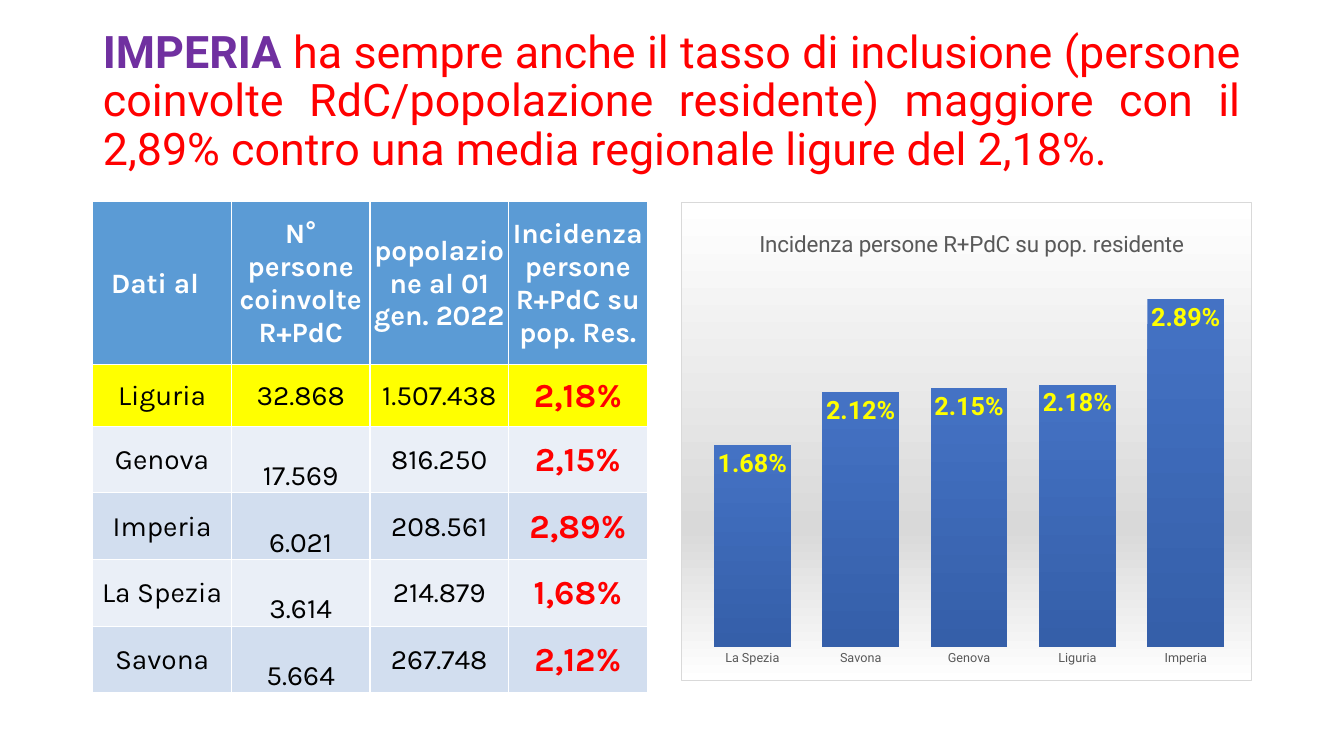
import dataclasses

import lxml.etree
import pptx
import pptx.chart.data
import pptx.dml.color
import pptx.enum.chart
import pptx.enum.text
import pptx.oxml
import pptx.oxml.ns
import pptx.util

Cm = pptx.util.Cm
Pt = pptx.util.Pt
qn = pptx.oxml.ns.qn


@dataclasses.dataclass(frozen=True)
class Theme:
    heading_font: str = "Roboto"
    table_font: str = "Karla"
    purple: str = "7030A0"
    red: str = "FF0000"
    yellow: str = "FFFF00"
    white: str = "FFFFFF"
    black: str = "000000"
    header_blue: str = "5B9BD5"
    bands: tuple = ("EAEFF7", "D2DEEF")
    grey_text: str = "595959"
    grey: str = "D9D9D9"
    bar_top: str = "4472C4"
    bar_bottom: str = "355FA9"
    title_size: int = 32
    table_size: int = 20
    rate_size: int = 24
    chart_title_size: int = 16
    label_size: int = 18
    chart_size: int = 10
    axis_size: int = 9


THEME = Theme()

HEADERS = ["Dati al  ", "N° persone coinvolte R+PdC",
           "popolazione al 01 gen. 2022", "Incidenza persone R+PdC su pop. Res."]
PROVINCES = [
    ["Liguria", "32.868", "1.507.438", "2,18%"],
    ["Genova", "17.569", "816.250", "2,15%"],
    ["Imperia", "6.021", "208.561", "2,89%"],
    ["La Spezia", "3.614", "214.879", "1,68%"],
    ["Savona", "5.664", "267.748", "2,12%"],
]
INCIDENCE = {"La Spezia": 0.0168, "Savona": 0.0212, "Genova": 0.0215,
             "Liguria": 0.0218, "Imperia": 0.0289}


def rgb(code):
    return pptx.dml.color.RGBColor.from_string(code)


def apply(target, values):
    for attribute, value in values.items():
        setattr(target, attribute, value)


def style_font(font, name, size, color, bold=False):
    apply(font, {"name": name, "size": Pt(size), "bold": bold})
    font.color.rgb = rgb(color)


def add_heading(slide):
    heading = slide.shapes.title
    apply(heading, {"left": Cm(2.34), "top": Cm(0.46),
                    "width": Cm(29.21), "height": Cm(4.24)})
    apply(heading.text_frame, {
        "word_wrap": True,
        "auto_size": pptx.enum.text.MSO_AUTO_SIZE.NONE,
        "vertical_anchor": pptx.enum.text.MSO_ANCHOR.MIDDLE})
    paragraph = heading.text_frame.paragraphs[0]
    apply(paragraph, {"alignment": pptx.enum.text.PP_ALIGN.JUSTIFY, "line_spacing": 0.9})
    statement = (" ha sempre anche il tasso di inclusione (persone coinvolte RdC/popolazione "
                 "residente) maggiore con il 2,89% contro una media regionale ligure del 2,18%.")
    for text, color, bold in (("IMPERIA", THEME.purple, True), (statement, THEME.red, False)):
        run = paragraph.add_run()
        run.text = text
        style_font(run.font, THEME.heading_font, THEME.title_size, color, bold)


def fill_cell(cell, text, background, size, color, bold, top=0.03):
    cell.fill.solid()
    cell.fill.fore_color.rgb = rgb(background)
    apply(cell, {"margin_left": Cm(0.03), "margin_right": Cm(0.03),
                 "margin_top": Cm(top), "margin_bottom": 0,
                 "vertical_anchor": pptx.enum.text.MSO_ANCHOR.MIDDLE})
    paragraph = cell.text_frame.paragraphs[0]
    paragraph.alignment = pptx.enum.text.PP_ALIGN.CENTER
    run = paragraph.add_run()
    run.text = text
    style_font(run.font, THEME.table_font, size, color, bold)


def add_province_table(slide):
    heights = [4.11, 1.55] + [1.68] * 4
    table = slide.shapes.add_table(len(heights), len(HEADERS), Cm(2.34), Cm(5.08),
                                   Cm(13.97), Cm(sum(heights))).table
    for row, height in zip(table.rows, heights):
        row.height = Cm(height)
    for column, header in enumerate(HEADERS):
        fill_cell(table.cell(0, column), header, THEME.header_blue,
                  THEME.table_size, THEME.white, True)
    for row, values in enumerate(PROVINCES, start=1):
        is_region = row == 1
        background = THEME.yellow if is_region else THEME.bands[row % 2]
        for column, value in enumerate(values):
            is_rate = column == len(values) - 1
            is_lowered = column == 1 and not is_region
            fill_cell(table.cell(row, column), value, background,
                      THEME.rate_size if is_rate else THEME.table_size,
                      THEME.red if is_rate else THEME.black,
                      is_rate, 0.84 if is_lowered else 0.03)


def add_gradient(properties, stops):
    gradient = lxml.etree.SubElement(properties, qn("a:gradFill"), rotWithShape="1")
    stop_list = lxml.etree.SubElement(gradient, qn("a:gsLst"))
    for percent, color in stops:
        stop = lxml.etree.SubElement(stop_list, qn("a:gs"), pos=str(percent * 1000))
        lxml.etree.SubElement(stop, qn("a:srgbClr"), val=color)
    lxml.etree.SubElement(gradient, qn("a:lin"), ang="5400000", scaled="0")


def set_layout(parent, position, values):
    for old in parent.findall(qn("c:layout")):
        parent.remove(old)
    layout = pptx.oxml.parse_xml(f'<c:layout {pptx.oxml.ns.nsdecls("c")}/>')
    parent.insert(position, layout)
    manual = lxml.etree.SubElement(layout, qn("c:manualLayout"))
    for tag, value in values.items():
        lxml.etree.SubElement(manual, qn(f"c:{tag}"), val=str(value))


def frame_chart(chart):
    text_properties = chart.element.find(qn("c:txPr"))
    frame = pptx.oxml.parse_xml(f'<c:spPr {pptx.oxml.ns.nsdecls("c", "a")}/>')
    text_properties.addprevious(frame)
    add_gradient(frame, [(0, THEME.white), (68, THEME.grey), (100, THEME.white)])
    border = lxml.etree.SubElement(frame, qn("a:ln"), w=str(Pt(0.75)))
    border_fill = lxml.etree.SubElement(border, qn("a:solidFill"))
    lxml.etree.SubElement(border_fill, qn("a:srgbClr"), val=THEME.grey)


def add_incidence_chart(slide):
    data = pptx.chart.data.CategoryChartData(number_format="0.00%")
    data.categories = list(INCIDENCE)
    data.add_series("Series 1", list(INCIDENCE.values()))
    chart = slide.shapes.add_chart(pptx.enum.chart.XL_CHART_TYPE.COLUMN_CLUSTERED,
                                   Cm(17.15), Cm(5.08), Cm(14.4), Cm(12.09), data).chart
    style_font(chart.font, THEME.heading_font, THEME.chart_size, THEME.black)
    apply(chart, {"has_legend": False, "has_title": True})

    title = chart.chart_title
    title.text_frame.text = "Incidenza persone R+PdC su pop. residente"
    style_font(title.text_frame.paragraphs[0].runs[0].font, THEME.heading_font,
               THEME.chart_title_size, THEME.grey_text)
    set_layout(title._element, 1, {"xMode": "edge", "yMode": "edge", "x": 0.13, "y": 0.05})

    names = chart.category_axis
    names.major_tick_mark = pptx.enum.chart.XL_TICK_MARK.NONE
    names.format.line.fill.background()
    style_font(names.tick_labels.font, THEME.heading_font, THEME.axis_size, THEME.grey_text)
    apply(chart.value_axis, {"visible": False, "has_major_gridlines": False,
                             "minimum_scale": 0, "maximum_scale": 0.035})

    columns = chart.plots[0]
    apply(columns, {"gap_width": 41, "vary_by_categories": False, "has_data_labels": True})
    apply(columns.data_labels, {
        "show_value": True, "number_format": "0.00%", "number_format_is_linked": False,
        "position": pptx.enum.chart.XL_LABEL_POSITION.INSIDE_END})
    style_font(columns.data_labels.font, THEME.heading_font, THEME.label_size,
               THEME.yellow, True)
    add_gradient(columns.series[0]._element.get_or_add_spPr(),
                 [(0, THEME.bar_top), (100, THEME.bar_bottom)])

    plot_area = chart.element.find(f'{qn("c:chart")}/{qn("c:plotArea")}')
    set_layout(plot_area, 0, {"layoutTarget": "inner", "xMode": "edge", "yMode": "edge",
                              "x": 0.03, "y": 0.05, "w": 0.95, "h": 0.88})
    frame_chart(chart)


def main():
    presentation = pptx.Presentation()
    apply(presentation, {"slide_width": Cm(33.87), "slide_height": Cm(19.05)})
    slide = presentation.slides.add_slide(presentation.slide_layouts[5])
    add_heading(slide)
    add_province_table(slide)
    add_incidence_chart(slide)
    presentation.save("out.pptx")


if __name__ == "__main__":
    main()
